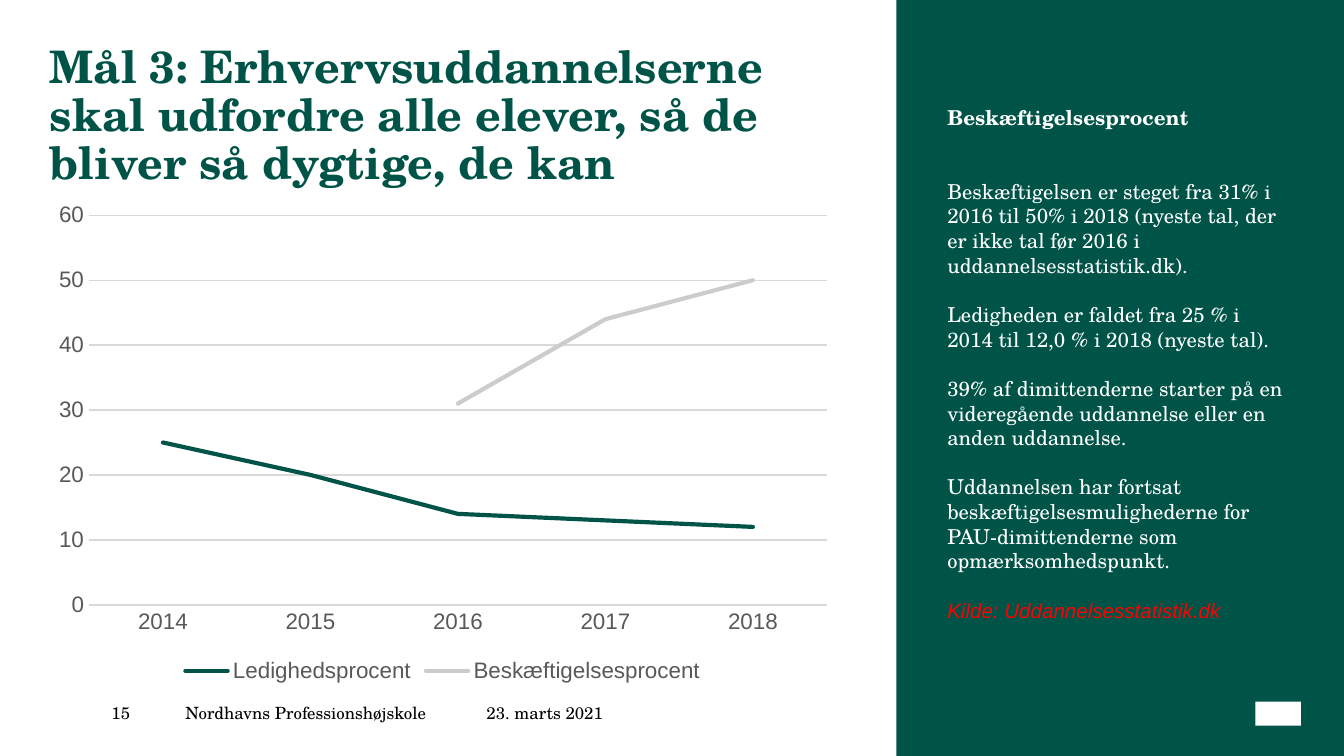
from lxml import etree
from pptx import Presentation
from pptx import util as u
from pptx.chart.data import CategoryChartData
from pptx.dml.color import RGBColor
from pptx.enum import chart as ch, shapes, text
from pptx.oxml.ns import qn

SLIDE_WIDTH = 10
SLIDE_HEIGHT = SLIDE_WIDTH * 9 / 16
SERIF, SANS = "TeX Gyre Schola", "Arial"
GREEN, WHITE, BLACK, RED = "005447", "FFFFFF", "000000", "FF0000"
LIGHT, GRID, LABEL = "CCCCCC", "D9D9D9", "595959"
LINE_GAP = 13.2  # one line of 11 pt text

YEARS = ["2014", "2015", "2016", "2017", "2018"]
SERIES = [
    ("Ledighedsprocent", [25, 20, 14, 13, 12], GREEN),
    ("Beskæftigelsesprocent", [None, None, 31, 44, 50], LIGHT),
]
TITLE = "Mål 3: Erhvervsuddannelserne skal udfordre alle elever, så de bliver så dygtige, de kan"
FINDINGS = [
    "Beskæftigelsen er steget fra 31% i 2016 til 50% i 2018 (nyeste tal, der er ikke tal "
    "før 2016 i uddannelsesstatistik.dk).",
    "Ledigheden er faldet fra 25 % i 2014 til 12,0 % i 2018 (nyeste tal).",
    "39% af dimittenderne starter på en videregående uddannelse eller en anden uddannelse.",
    "Uddannelsen har fortsat beskæftigelsesmulighederne for PAU-dimittenderne som "
    "opmærksomhedspunkt.",
]


def rgb(value):
    return RGBColor.from_string(value)


def inches(*box):
    return [u.Inches(length) for length in box]


def style_font(font, size, color, face):
    font.size, font.name = u.Pt(size), face
    font.color.rgb = rgb(color)


def style_line(line, color, width):
    line.color.rgb = rgb(color)
    line.width = u.Pt(width)


def add_text_frame(slide, box, margins=(0, 0)):
    """Add a wrapping text box; margins are horizontal and vertical."""
    frame = slide.shapes.add_textbox(*inches(*box)).text_frame
    frame.word_wrap = True
    frame.vertical_anchor = text.MSO_ANCHOR.TOP
    frame.margin_left = frame.margin_right = u.Inches(margins[0])
    frame.margin_top = frame.margin_bottom = u.Inches(margins[1])
    return frame


def write(paragraph, words, size=9, color=BLACK, face=SERIF, bold=False,
          italic=False, after=0, spacing=None):
    run = paragraph.add_run()
    run.text = words
    style_font(run.font, size, color, face)
    run.font.bold, run.font.italic = bold, italic
    paragraph.space_after = u.Pt(after)
    if spacing:
        paragraph.line_spacing = spacing


def add_block(slide, box, color):
    block = slide.shapes.add_shape(shapes.MSO_SHAPE.RECTANGLE, *inches(*box))
    block.shadow.inherit = False
    block.fill.solid()
    block.fill.fore_color.rgb = rgb(color)
    block.line.fill.background()


def add_title(slide, box):
    write(add_text_frame(slide, box).paragraphs[0], TITLE, size=24, color=GREEN,
          bold=True, spacing=0.9)


def add_footer(slide, left, top):
    parts = [(0, 0.46, "15"), (0.55, 2.08, "Nordhavns Professionshøjskole"),
             (2.79, 2.8, "23. marts 2021")]
    for offset, width, words in parts:
        write(add_text_frame(slide, (left + offset, top, width, 0.15)).paragraphs[0], words)


def add_side_panel(slide, left, top, width, height):
    add_block(slide, (left, top, width, height), GREEN)
    add_block(slide, (left + 2.67, top + 5.22, 0.34, 0.18), WHITE)
    frame = add_text_frame(slide, (left + 0.28, top + 0.73, 2.73, 5.1), (0.1, 0.05))
    write(frame.paragraphs[0], "Beskæftigelsesprocent", size=11, color=WHITE, bold=True,
          after=2 * LINE_GAP)
    for finding in FINDINGS:
        write(frame.add_paragraph(), finding, size=11, color=WHITE, after=LINE_GAP)
    write(frame.add_paragraph(), "Kilde: Uddannelsesstatistik.dk", size=11, color=RED,
          face=SANS, italic=True)


def add_rate_chart(slide, box):
    data = CategoryChartData()
    data.categories = YEARS
    for name, values, _ in SERIES:
        data.add_series(name, values)
    chart = slide.shapes.add_chart(ch.XL_CHART_TYPE.LINE, *inches(*box), data).chart
    style_font(chart.font, 10, BLACK, SANS)
    chart.has_title = False

    chart.has_legend = True
    chart.legend.position = ch.XL_LEGEND_POSITION.BOTTOM
    chart.legend.include_in_layout = False
    style_font(chart.legend.font, 12, LABEL, SANS)

    years, rates = chart.category_axis, chart.value_axis
    for axis in (years, rates):
        axis.major_tick_mark = axis.minor_tick_mark = ch.XL_TICK_MARK.NONE
        style_font(axis.tick_labels.font, 12, LABEL, SANS)
    style_line(years.format.line, GRID, 0.75)
    rates.format.line.fill.background()
    rates.minimum_scale, rates.maximum_scale, rates.major_unit = 0, 60, 10
    rates.has_major_gridlines = True
    style_line(rates.major_gridlines.format.line, GRID, 0.75)

    plot = chart.plots[0]
    plot.vary_by_categories = False
    for series, (_, _, color) in zip(plot.series, SERIES):
        series.smooth = False
        series.marker.style = ch.XL_MARKER_STYLE.NONE
        style_line(series.format.line, color, 2.25)
        outline = series._element.find(qn("c:spPr")).find(qn("a:ln"))
        outline.set("cap", "rnd")
        etree.SubElement(outline, qn("a:round"))


def main():
    deck = Presentation()
    deck.slide_width, deck.slide_height = inches(SLIDE_WIDTH, SLIDE_HEIGHT)
    slide = deck.slides.add_slide(deck.slide_layouts[6])
    add_footer(slide, 0.83, 5.23)
    add_side_panel(slide, 6.67, 0, 3.33, SLIDE_HEIGHT)
    add_rate_chart(slide, (0.32, 1.44, 5.95, 3.68))
    add_title(slide, (0.37, 0.33, 5.71, 0.75))
    deck.save("out.pptx")


if __name__ == "__main__":
    main()
